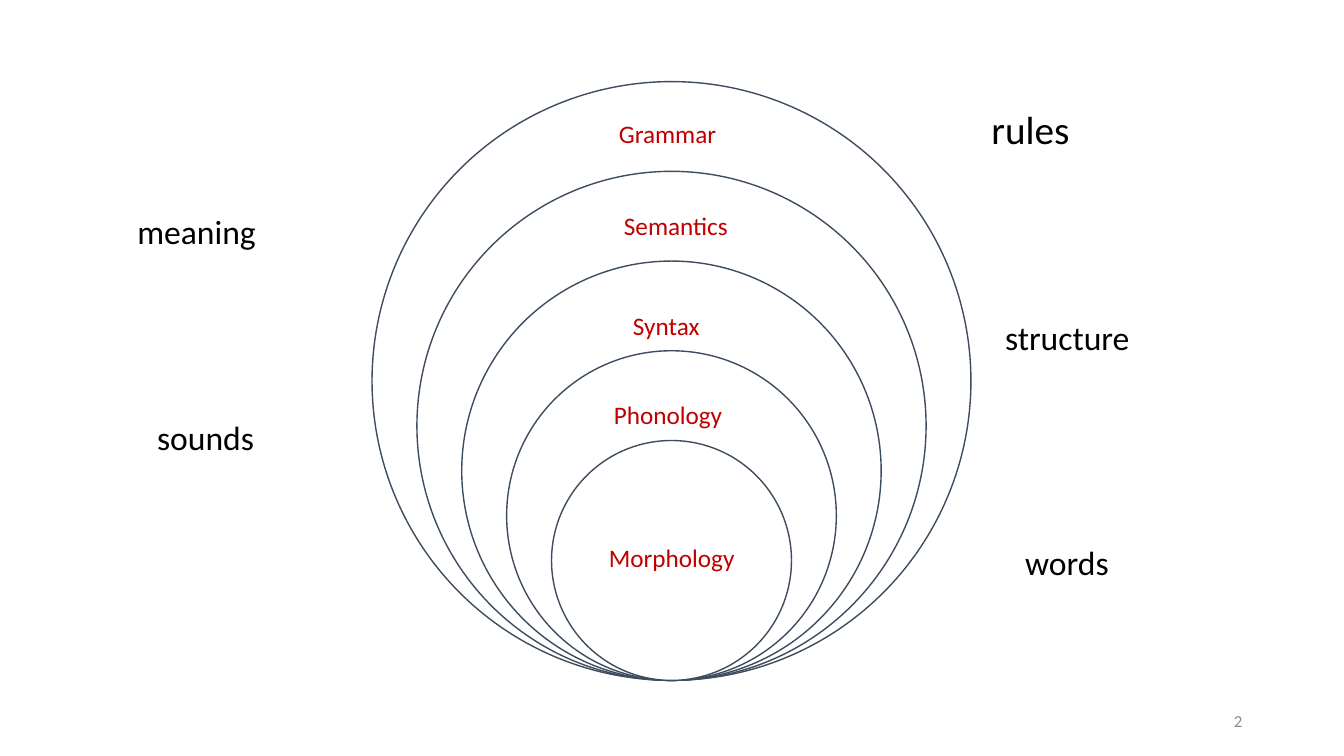
from dataclasses import dataclass

from pptx import Presentation
from pptx.dml.color import RGBColor
from pptx.enum.shapes import MSO_SHAPE
from pptx.enum.text import MSO_ANCHOR, PP_ALIGN
from pptx.util import Inches, Pt


@dataclass(frozen=True)
class Theme:
    font: str = "Calibri"
    fill: RGBColor = RGBColor(0xFF, 0xFF, 0xFF)
    outline: RGBColor = RGBColor(0x3E, 0x4C, 0x60)
    level: RGBColor = RGBColor(0xC0, 0x00, 0x00)
    meaning: RGBColor = RGBColor(0x00, 0x00, 0x00)
    number: RGBColor = RGBColor(0x8C, 0x8C, 0x8C)
    level_size: int = 18
    meaning_size: int = 24
    large_size: int = 28
    number_size: int = 12


THEME = Theme()

CIRCLE_COUNT = 5
CENTER_X, BOTTOM = 6.66, 6.75
OUTER_DIAMETER, DIAMETER_STEP = 5.94, 0.89

# Text, left, top, width
LEVELS = [
    ("Grammar", 6.04, 1.12, 1.26),
    ("Semantics", 6.09, 2.04, 1.26),
    ("Syntax", 6.18, 3.03, 1.07),
    ("Phonology", 5.99, 3.91, 1.34),
    ("Morphology", 5.94, 5.33, 1.46),
]

# Text, left, top, width, height, size, alignment
MEANINGS = [
    ("rules", 9.7, 1, 1.04, 0.57, THEME.large_size, PP_ALIGN.CENTER),
    ("meaning", 1.2, 2.04, 1.5, 0.5, THEME.meaning_size, PP_ALIGN.CENTER),
    ("structure", 9.87, 3.09, 1.46, 0.5, THEME.meaning_size, PP_ALIGN.LEFT),
    ("sounds", 1.46, 4.09, 1.24, 0.5, THEME.meaning_size, PP_ALIGN.LEFT),
    ("words", 10.07, 5.33, 1.04, 0.5, THEME.meaning_size, PP_ALIGN.LEFT),
]


def add_nested_circles(slide):
    """Stack circles, largest first, that all touch at the bottom."""
    for index in range(CIRCLE_COUNT):
        diameter = OUTER_DIAMETER - index * DIAMETER_STEP
        circle = slide.shapes.add_shape(
            MSO_SHAPE.OVAL,
            Inches(CENTER_X - diameter / 2), Inches(BOTTOM - diameter),
            Inches(diameter), Inches(diameter),
        )
        circle.shadow.inherit = False
        circle.fill.solid()
        circle.fill.fore_color.rgb = THEME.fill
        circle.line.color.rgb = THEME.outline
        circle.line.width = Pt(1)


def add_label(slide, text, left, top, width, height, size, color,
              alignment=PP_ALIGN.LEFT, anchor=MSO_ANCHOR.TOP):
    label = slide.shapes.add_textbox(
        Inches(left), Inches(top), Inches(width), Inches(height))
    frame = label.text_frame
    frame.word_wrap = True
    frame.vertical_anchor = anchor
    paragraph = frame.paragraphs[0]
    paragraph.text = text
    paragraph.alignment = alignment
    paragraph.font.name = THEME.font
    paragraph.font.size = Pt(size)
    paragraph.font.color.rgb = color


def main():
    presentation = Presentation()
    presentation.slide_width = Inches(13.33)
    presentation.slide_height = Inches(7.5)
    slide = presentation.slides.add_slide(presentation.slide_layouts[6])

    add_nested_circles(slide)
    for text, left, top, width in LEVELS:
        add_label(slide, text, left, top, width, 0.4,
                  THEME.level_size, THEME.level)
    for text, left, top, width, height, size, alignment in MEANINGS:
        add_label(slide, text, left, top, width, height, size,
                  THEME.meaning, alignment)
    add_label(slide, "2", 9.42, 6.95, 3, 0.4, THEME.number_size,
              THEME.number, PP_ALIGN.RIGHT, MSO_ANCHOR.MIDDLE)

    presentation.save("out.pptx")


if __name__ == "__main__":
    main()
